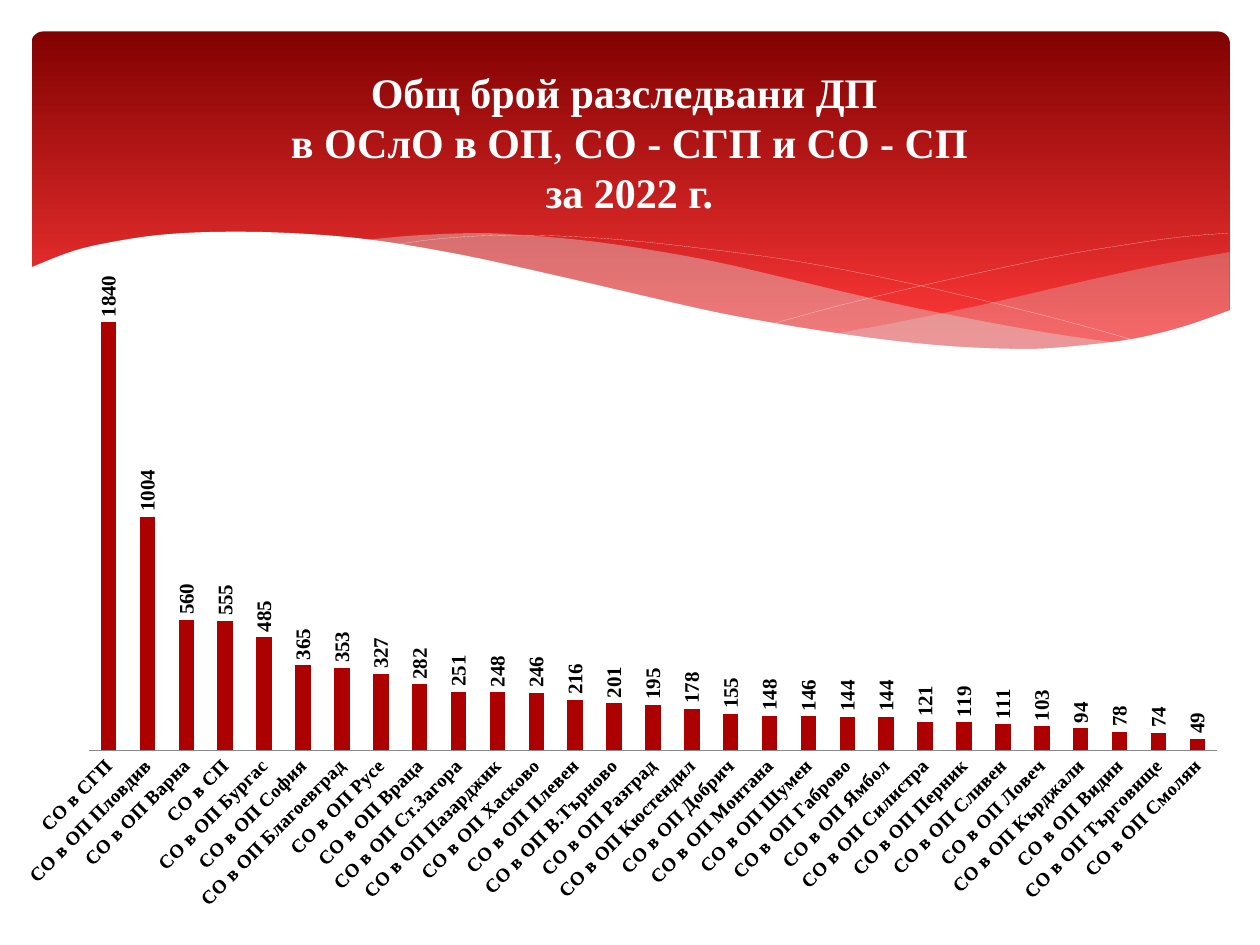
import pptx
import pptx.chart.data
import pptx.dml.color
import pptx.enum.chart
import pptx.enum.shapes
import pptx.enum.text
import pptx.oxml
import pptx.oxml.ns
import pptx.util
from lxml import etree

Inches, Pt = pptx.util.Inches, pptx.util.Pt
RGB = pptx.dml.color.RGBColor.from_string
qn = pptx.oxml.ns.qn

HUES = {"dark": "820101", "light": "FE3737", "veil": "DEDEE0", "white": "FFFFFF",
        "bar": "AD0101", "brown": "726056", "sand": "AC956E",
        "text": "000000", "axis": "898989"}

COUNTS = {
    "СО в СГП": 1840, "СО в ОП Пловдив": 1004, "СО в ОП Варна": 560,
    "СО в СП": 555, "СО в ОП Бургас": 485, "СО в ОП София": 365,
    "СО в ОП Благоевград": 353, "СО в ОП Русе": 327, "СО в ОП Враца": 282,
    "СО в ОП Ст.Загора": 251, "СО в ОП Пазарджик": 248, "СО в ОП Хасково": 246,
    "СО в ОП Плевен": 216, "СО в ОП В.Търново": 201, "СО в ОП Разград": 195,
    "СО в ОП Кюстендил": 178, "СО в ОП Добрич": 155, "СО в ОП Монтана": 148,
    "СО в ОП Шумен": 146, "СО в ОП Габрово": 144, "СО в ОП Ямбол": 144,
    "СО в ОП Силистра": 121, "СО в ОП Перник": 119, "СО в ОП Сливен": 111,
    "СО в ОП Ловеч": 103, "СО в ОП Кърджали": 94, "СО в ОП Видин": 78,
    "СО в ОП Търговище": 74, "СО в ОП Смолян": 49,
}

TITLE = [[("Общ брой разследвани ДП ", True)],
         [("в ОСлО в ОП", True), (",", False), (" СО - СГП и СО - СП", True)],
         [("за 2022 г.", True)]]

# Each outline is a list of smooth curves, joined by straight edges.
RIGHT = [[(9.76, 2), (9.21, 2.1), (8.61, 2.23), (7.79, 2.42), (7.06, 2.57), (6.61, 2.65)],
         [(6.61, 2.65), (7.19, 2.72), (7.69, 2.77), (8.14, 2.78), (8.54, 2.76),
          (8.97, 2.7), (9.35, 2.62), (9.76, 2.47)]]
LEFT = [[(8.93, 2.73), (8.37, 2.65), (7.75, 2.54), (7.06, 2.4), (6.29, 2.22), (5.69, 2.08),
         (5.14, 1.98), (4.65, 1.91), (4.2, 1.87), (3.8, 1.85), (3.28, 1.87), (2.86, 1.91)],
        [(2.86, 1.91), (3.42, 1.99), (4.04, 2.11), (4.49, 2.22), (5.3, 2.4), (6.01, 2.55),
         (6.65, 2.66), (7.22, 2.74), (7.73, 2.77), (8.18, 2.78), (8.57, 2.77), (8.93, 2.73)]]
FALL = [[(3.09, 1.95), (3.44, 1.9), (3.87, 1.87), (4.33, 1.87), (4.89, 1.9), (5.56, 1.97),
         (6.36, 2.08), (7.27, 2.26), (8.31, 2.51), (9.07, 2.72)]]
RISE = [[(6.13, 2.57), (6.72, 2.41), (7.48, 2.23), (8.36, 2.04), (8.95, 1.94),
         (9.38, 1.88), (9.75, 1.85)]]
WAVE = [[(9.77, 2.46), (9.4, 2.59), (8.99, 2.69), (8.5, 2.75), (8.09, 2.77), (7.44, 2.74),
         (6.68, 2.65), (5.79, 2.5), (5.03, 2.33), (4.47, 2.2), (3.65, 2.02), (2.92, 1.9),
         (2.3, 1.85), (1.77, 1.84), (1.32, 1.86), (0.95, 1.91), (0.59, 1.99), (0.23, 2.13)],
        [(0.23, 3.29), (9.77, 3.29)]]


def smooth(knots, steps=5):
    """Sample a Catmull-Rom curve through the knots."""
    if len(knots) == 2:
        return knots
    ends = [knots[0], *knots, knots[-1]]
    dots = []
    for a, b, c, d in zip(ends, ends[1:], ends[2:], ends[3:]):
        for t in (i / steps for i in range(steps)):
            dots.append(tuple(
                (2 * q + (r - p) * t + (2 * p - 5 * q + 4 * r - s) * t ** 2
                 + (3 * q - p - 3 * r + s) * t ** 3) / 2
                for p, q, r, s in zip(a, b, c, d)))
    return dots + [knots[-1]]


def turn(part, angle):
    """Rotate the text of chart labels, in degrees."""
    body = part.find(".//" + qn("a:bodyPr"))
    body.set("rot", str(angle * 60000))
    body.set("vert", "horz")


class Deck:
    def __init__(self):
        self.font = "Times New Roman"
        self.show = pptx.Presentation()
        self.show.slide_width, self.show.slide_height = Inches(10), Inches(7.5)
        self.slide = self.show.slides.add_slide(self.show.slide_layouts[5])

    def style(self, font, size, hue, bold=True):
        font.name, font.size, font.bold = self.font, Pt(size), bold
        font.color.rgb = RGB(HUES[hue])

    def banner(self, x, y, w, h):
        kind = pptx.enum.shapes.MSO_SHAPE.ROUNDED_RECTANGLE
        box = self.slide.shapes.add_shape(kind, Inches(x), Inches(y), Inches(w), Inches(h))
        box.adjustments[0] = 0.034
        box.shadow.inherit = False
        box.line.fill.background()
        box.fill.gradient()
        box.fill.gradient_angle = 270
        for stop, spot, hue in zip(box.fill.gradient_stops, (0, 0.9), ("dark", "light")):
            stop.position, stop.color.rgb = spot, RGB(HUES[hue])

    def outline(self, curves, closed):
        dots = [(Inches(x), Inches(y)) for c in curves for x, y in smooth(c)]
        pen = self.slide.shapes.build_freeform(*dots[0])
        pen.add_line_segments(dots[1:], close=closed)
        shape = pen.convert_to_shape()
        shape.shadow.inherit = False
        return shape

    def area(self, curves, hue, alpha=100):
        shape = self.outline(curves, True)
        shape.line.fill.background()
        shape.fill.solid()
        shape.fill.fore_color.rgb = RGB(HUES[hue])
        if alpha < 100:
            color = shape.element.spPr.find(".//" + qn("a:srgbClr"))
            etree.SubElement(color, qn("a:alpha")).set("val", str(alpha * 1000))

    def stroke(self, curves):
        shape = self.outline(curves, False)
        shape.fill.background()
        shape.line.color.rgb = RGB(HUES["white"])
        shape.line.width = Pt(0.05)

    def title(self, lines, x, y, w, h):
        box = self.slide.shapes.title
        box.left, box.top, box.width, box.height = map(Inches, (x, y, w, h))
        box.element.getparent().append(box.element)  # in front of the banner
        frame = box.text_frame
        frame.word_wrap = True
        frame.auto_size = pptx.enum.text.MSO_AUTO_SIZE.NONE
        frame.vertical_anchor = pptx.enum.text.MSO_ANCHOR.MIDDLE
        para = frame.paragraphs[0]
        para.alignment = pptx.enum.text.PP_ALIGN.CENTER
        for i, line in enumerate(lines):
            if i:
                para.add_line_break()
            for text, bold in line:
                run = para.add_run()
                run.text = text
                self.style(run.font, 24, "white", bold)

    def chart(self, counts, x, y, w, h):
        enum = pptx.enum.chart
        data = pptx.chart.data.CategoryChartData()
        data.categories = list(counts)
        for i, values in enumerate((list(counts.values()), [], []), 1):
            data.add_series(f"Series {i}", values)
        chart = self.slide.shapes.add_chart(
            enum.XL_CHART_TYPE.COLUMN_CLUSTERED,
            Inches(x), Inches(y), Inches(w), Inches(h), data).chart
        chart.has_legend = chart.has_title = False
        chart.font.name, chart.font.size = "Cabin", Pt(18)
        chart.font.color.rgb = RGB(HUES["text"])

        plot = chart.plots[0]
        plot.gap_width, plot.overlap, plot.vary_by_categories = 150, -25, False
        for series, hue in zip(plot.series, ("bar", "brown", "sand")):
            fill = series.format.fill
            fill.solid()
            fill.fore_color.rgb = RGB(HUES[hue])
            if not series.values:  # an empty series must take no room
                node = series._element
                node.remove(node.find(qn("c:val")))
        plot.has_data_labels = True
        tags = plot.data_labels
        tags.show_value = True
        tags.position = enum.XL_LABEL_POSITION.OUTSIDE_END
        self.style(tags.font, 12, "text")
        turn(tags._element, -90)

        scale, names = chart.value_axis, chart.category_axis
        scale.visible = scale.has_major_gridlines = False
        scale.minimum_scale, scale.maximum_scale = 0, 2000
        names.major_tick_mark = enum.XL_TICK_MARK.NONE
        names.format.line.color.rgb = RGB(HUES["axis"])
        names.format.line.width = Pt(0.25)
        self.style(names.tick_labels.font, 11, "text")
        turn(names._element, -45)
        self.place(chart, x=0.042, y=0.046, w=0.942, h=0.699)

    def place(self, chart, **parts):
        """Fix the inner plot area, in fractions of the chart."""
        area = chart._chartSpace.find(".//" + qn("c:plotArea"))
        for old in area.findall(qn("c:layout")):
            area.remove(old)
        layout = etree.Element(qn("c:layout"))
        manual = etree.SubElement(layout, qn("c:manualLayout"))
        marks = {"layoutTarget": "inner", "xMode": "edge", "yMode": "edge", **parts}
        for tag, value in marks.items():
            etree.SubElement(manual, qn("c:" + tag)).set("val", str(value))
        area.insert(0, layout)


def main():
    deck = Deck()
    deck.banner(0.25, 0.25, 9.51, 2.7)
    deck.area(RIGHT, "veil", 29)
    deck.area(LEFT, "veil", 40)
    deck.stroke(FALL)
    deck.stroke(RISE)
    deck.area(WAVE, "white")
    deck.title(TITLE, 0.35, 0.44, 9.29, 1.37)
    deck.chart(COUNTS, 0.2, 2.02, 9.61, 5.28)
    deck.show.save("out.pptx")


if __name__ == "__main__":
    main()
